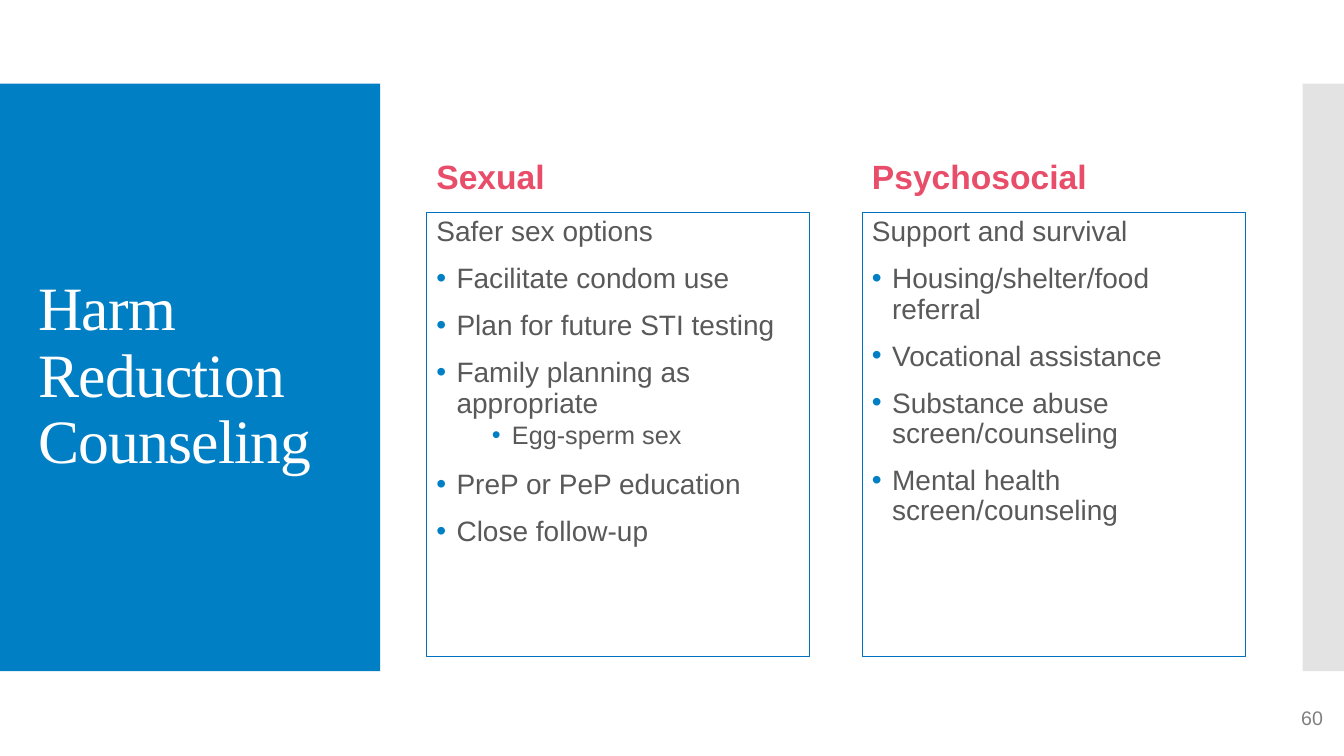
"""Build the harm reduction counseling slide."""
from dataclasses import dataclass

from lxml.etree import SubElement
from pptx import Presentation
from pptx.dml.color import RGBColor as RGB
from pptx.enum.shapes import MSO_SHAPE as Shape
from pptx.enum.text import MSO_ANCHOR as Anchor, MSO_AUTO_SIZE as AutoSize, PP_ALIGN as Align
from pptx.oxml.ns import qn
from pptx.util import Inches, Pt


@dataclass(frozen=True)
class Theme:
    blue: str = "007FC4"
    border: str = "0070C0"
    gray: str = "C8C8C8"
    white: str = "FFFFFF"
    pink: str = "E84D69"
    body: str = "595959"
    number: str = "808080"
    title_font: str = "Times New Roman"
    text_font: str = "Arial"
    title_size: int = 44
    heading_size: int = 24
    item_size: int = 20
    subitem_size: int = 18
    number_size: int = 14


def apply(target, values):
    for name, value in values.items():
        setattr(target, name, value)


class SlideBuilder:
    def __init__(self, slide, theme):
        self.slide = slide
        self.theme = theme

    def add_text(self, paragraph, text, size, color, font=None, bold=False):
        run = paragraph.add_run()
        run.text = text
        apply(run.font, {"size": Pt(size), "name": font or self.theme.text_font, "bold": bold})
        run.font.color.rgb = RGB.from_string(color)
        return run

    def panel(self, left, width, color, opacity=100):
        panel = self.slide.shapes.add_shape(
            Shape.RECTANGLE, Inches(left), Inches(0.83), Inches(width), Inches(5.83))
        panel.shadow.inherit = False
        panel.fill.solid()
        panel.fill.fore_color.rgb = RGB.from_string(color)
        panel.line.fill.background()
        if opacity < 100:
            shade = panel.element.spPr.find(qn("a:solidFill"))[0]
            SubElement(shade, qn("a:alpha"), val=str(opacity * 1000))

    def title(self, text):
        title = self.slide.shapes.title
        apply(title, {"left": Inches(0.28), "top": Inches(1.23),
                      "width": Inches(3.22), "height": Inches(5.03)})
        apply(title.text_frame, {"word_wrap": True, "auto_size": AutoSize.NONE,
                                 "vertical_anchor": Anchor.MIDDLE})
        paragraph = title.text_frame.paragraphs[0]
        apply(paragraph, {"alignment": Align.LEFT, "line_spacing": 0.9})
        run = self.add_text(paragraph, text, self.theme.title_size, self.theme.white,
                            self.theme.title_font)
        run.font._element.set("spc", "-60")
        title.element.getparent().append(title.element)

    def text_box(self, left, top, height, **frame_format):
        box = self.slide.shapes.add_textbox(
            Inches(left), Inches(top), Inches(3.8), Inches(height))
        apply(box.text_frame, {"word_wrap": True, **frame_format})
        return box

    def heading(self, left, text):
        box = self.text_box(left, 1.12, 0.88, vertical_anchor=Anchor.BOTTOM)
        paragraph = box.text_frame.paragraphs[0]
        paragraph.line_spacing = 0.9
        self.add_text(paragraph, text, self.theme.heading_size, self.theme.pink, bold=True)

    def bullet(self, paragraph, indent):
        properties = paragraph._p.get_or_add_pPr()
        margins = {"marL": Inches(indent), "indent": Inches(-0.2)}
        for name, value in margins.items():
            properties.set(name, str(value))
        color = SubElement(properties, qn("a:buClr"))
        SubElement(color, qn("a:srgbClr"), val=self.theme.blue)
        SubElement(properties, qn("a:buFont"), typeface=self.theme.text_font)
        SubElement(properties, qn("a:buChar"), char="•")

    def topic_list(self, left, lead, items):
        box = self.text_box(left, 2.11, 4.4)
        box.line.color.rgb = RGB.from_string(self.theme.border)
        box.line.width = Pt(0.75)
        frame = box.text_frame
        first = frame.paragraphs[0]
        first.line_spacing = 0.9
        self.add_text(first, lead, self.theme.item_size, self.theme.body)
        for level, text in items:
            paragraph = frame.add_paragraph()
            self.bullet(paragraph, 0.75 if level else 0.2)
            apply(paragraph, {"level": level, "line_spacing": 0.9,
                              "space_before": Pt(2.5 if level else 12),
                              "space_after": Pt(2.5 if level else 0)})
            size = self.theme.subitem_size if level else self.theme.item_size
            self.add_text(paragraph, text, size, self.theme.body)

    def page_number(self, text):
        box = self.text_box(9.42, 6.95, 0.4)
        paragraph = box.text_frame.paragraphs[0]
        paragraph.alignment = Align.RIGHT
        self.add_text(paragraph, text, self.theme.number_size, self.theme.number)


TOPICS = [
    ("Sexual", "Safer sex options", [
        (0, "Facilitate condom use"),
        (0, "Plan for future STI testing"),
        (0, "Family planning as appropriate"),
        (1, "Egg-sperm sex"),
        (0, "PreP or PeP education"),
        (0, "Close follow-up"),
    ]),
    ("Psychosocial", "Support and survival", [
        (0, "Housing/shelter/food referral"),
        (0, "Vocational assistance"),
        (0, "Substance abuse screen/counseling"),
        (0, "Mental health screen/counseling"),
    ]),
]


def main():
    theme = Theme()
    deck = Presentation()
    apply(deck, {"slide_width": Inches(13.33), "slide_height": Inches(7.5)})
    builder = SlideBuilder(deck.slides.add_slide(deck.slide_layouts[5]), theme)
    builder.panel(0, 3.77, theme.blue)
    builder.panel(12.92, 0.41, theme.gray, opacity=50)
    builder.title("Harm Reduction Counseling")
    for column, (heading, lead, items) in enumerate(TOPICS):
        left = 4.23 + 4.32 * column
        builder.heading(left, heading)
        builder.topic_list(left, lead, items)
    builder.page_number("60")
    deck.save("out.pptx")


if __name__ == "__main__":
    main()
